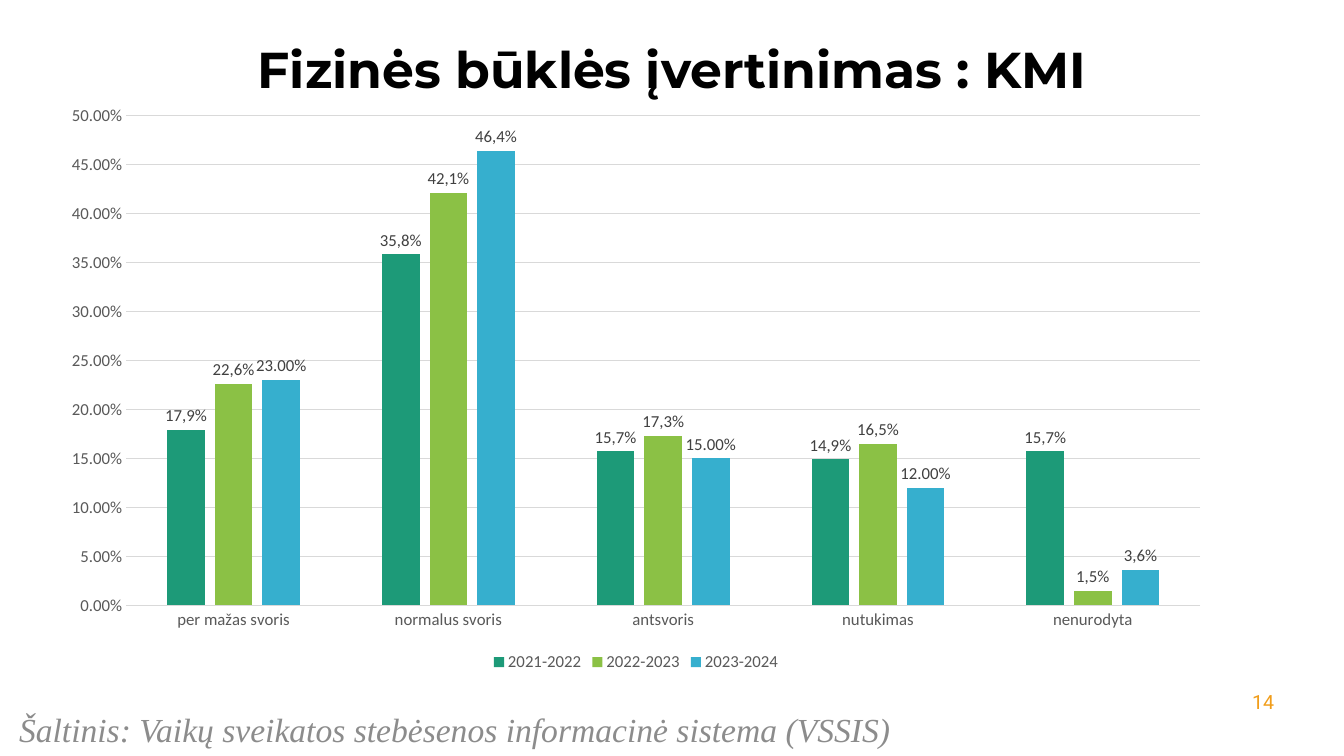
from dataclasses import dataclass

from lxml.etree import SubElement
from pptx import Presentation
from pptx.chart.chart import Chart
from pptx.chart.data import CategoryChartData
from pptx.chart.series import BarSeries
from pptx.dml.color import RGBColor
from pptx.enum.chart import (XL_CHART_TYPE, XL_LABEL_POSITION,
                             XL_LEGEND_POSITION, XL_TICK_MARK)
from pptx.enum.text import MSO_ANCHOR, PP_ALIGN
from pptx.oxml.ns import qn
from pptx.slide import Slide
from pptx.text.text import Font
from pptx.util import Cm, Pt

COLOURS = {
    "title": "000000",
    "source": "8C8C8C",
    "page": "F19D19",
    "axis": "595959",
    "label": "404040",
    "grid": "D9D9D9",
    "green": "1D9A78",
    "lime": "8BC145",
    "blue": "36AFCE",
}
PERCENT = "0.00%"


@dataclass(frozen=True)
class SchoolYear:
    name: str
    colour: str
    shares: tuple[float, ...]


@dataclass(frozen=True)
class Note:
    text: str
    box: tuple[float, float, float, float]
    typeface: str
    size: float
    colour: str
    italic: bool = False
    align: PP_ALIGN = PP_ALIGN.LEFT


WEIGHT_GROUPS = ("per mažas svoris", "normalus svoris", "antsvoris",
                 "nutukimas", "nenurodyta")
SCHOOL_YEARS = (
    SchoolYear("2021-2022", "green", (0.179, 0.358, 0.157, 0.149, 0.157)),
    SchoolYear("2022-2023", "lime", (0.226, 0.421, 0.173, 0.165, 0.015)),
    SchoolYear("2023-2024", "blue", (0.23, 0.464, 0.15, 0.12, 0.036)),
)
NOTES = (
    Note("Šaltinis: Vaikų sveikatos stebėsenos informacinė sistema (VSSIS)",
         (0.23, 17.73, 22.78, 0.97), "Times New Roman", 24, "source", italic=True),
    Note("14", (31.04, 17.25, 1.32, 1.02), "Roboto", 14, "page",
         align=PP_ALIGN.RIGHT),
)


def rgb(colour: str) -> RGBColor:
    return RGBColor.from_string(COLOURS[colour])


def style_font(font: Font, typeface: str, size: float, colour: str,
               bold: bool = False, italic: bool = False) -> None:
    font.name = typeface
    font.size = Pt(size)
    font.bold = bold
    font.italic = italic
    font.color.rgb = rgb(colour)


def write_title(slide: Slide, text: str) -> None:
    title = slide.shapes.title
    title.left, title.top, title.width, title.height = (
        Cm(0), Cm(0), Cm(33.87), Cm(3.66))
    title.text_frame.text = text
    title.text_frame.vertical_anchor = MSO_ANCHOR.MIDDLE
    heading = title.text_frame.paragraphs[0]
    heading.alignment = PP_ALIGN.CENTER
    heading.line_spacing = 0.9
    style_font(heading.runs[0].font, "Montserrat", 36, "title", bold=True)


def write_note(slide: Slide, note: Note) -> None:
    frame = slide.shapes.add_textbox(*map(Cm, note.box)).text_frame
    frame.word_wrap = True
    frame.text = note.text
    line = frame.paragraphs[0]
    line.alignment = note.align
    style_font(line.runs[0].font, note.typeface, note.size, note.colour,
               italic=note.italic)


def style_axes(chart: Chart) -> None:
    for axis in (chart.category_axis, chart.value_axis):
        axis.major_tick_mark = axis.minor_tick_mark = XL_TICK_MARK.NONE
        style_font(axis.tick_labels.font, "Calibri", 12, "axis")

    shares = chart.value_axis
    shares.minimum_scale, shares.maximum_scale, shares.major_unit = 0, 0.5, 0.05
    shares.tick_labels.number_format = PERCENT
    shares.tick_labels.number_format_is_linked = False
    shares.format.line.fill.background()
    for line in (chart.category_axis.format.line, shares.major_gridlines.format.line):
        line.color.rgb = rgb("grid")
        line.width = Pt(0.75)


def label_bars(series: BarSeries, year: SchoolYear) -> None:
    """Label whole percents by number format, others with a decimal comma."""
    labels = series.data_labels
    labels.show_value = True
    labels.position = XL_LABEL_POSITION.OUTSIDE_END
    labels.number_format = PERCENT
    labels.number_format_is_linked = False
    style_font(labels.font, "Calibri", 12, "label")
    for index, share in enumerate(year.shares):
        shown = f"{share:.1%}".replace(".", ",")
        if shown.endswith(",0%"):
            continue
        label = series.points[index].data_label
        label.text_frame.text = shown
        label.position = XL_LABEL_POSITION.OUTSIDE_END
        style_font(label.text_frame.paragraphs[0].runs[0].font,
                   "Calibri", 12, "label")


def draw_chart(slide: Slide) -> None:
    data = CategoryChartData(number_format=PERCENT)
    data.categories = WEIGHT_GROUPS
    for year in SCHOOL_YEARS:
        data.add_series(year.name, year.shares)
    chart = slide.shapes.add_chart(
        XL_CHART_TYPE.COLUMN_CLUSTERED,
        Cm(1.22), Cm(2.36), Cm(29.62), Cm(14.68), data).chart
    style_font(chart.font, "Calibri", 10, "title")
    chart.has_title = False
    chart.has_legend = True
    chart.legend.position = XL_LEGEND_POSITION.BOTTOM
    chart.legend.include_in_layout = False
    style_font(chart.legend.font, "Calibri", 12, "axis")
    style_axes(chart)

    bars = chart.plots[0]
    bars.gap_width = 219
    bars.overlap = -27
    bars.vary_by_categories = False
    for series, year in zip(bars.series, SCHOOL_YEARS):
        series.format.fill.solid()
        series.format.fill.fore_color.rgb = rgb(year.colour)
        series.invert_if_negative = False
        label_bars(series, year)


def main() -> None:
    presentation = Presentation()
    presentation.slide_width, presentation.slide_height = Cm(33.87), Cm(19.05)
    slide = presentation.slides.add_slide(presentation.slide_layouts[5])
    for note in NOTES:
        write_note(slide, note)
    write_title(slide, "Fizinės būklės įvertinimas : KMI")
    draw_chart(slide)
    presentation.save("out.pptx")


if __name__ == "__main__":
    main()
